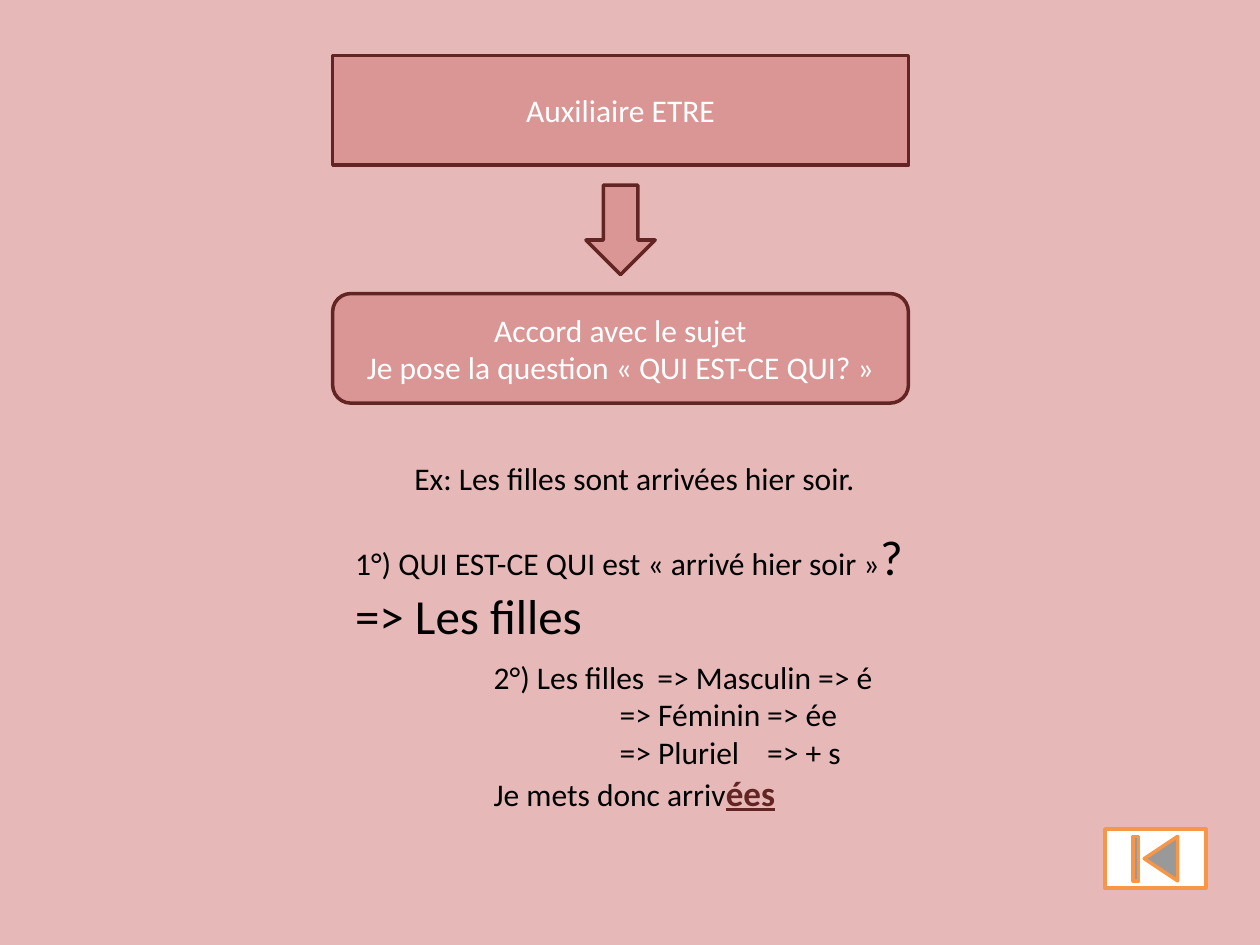
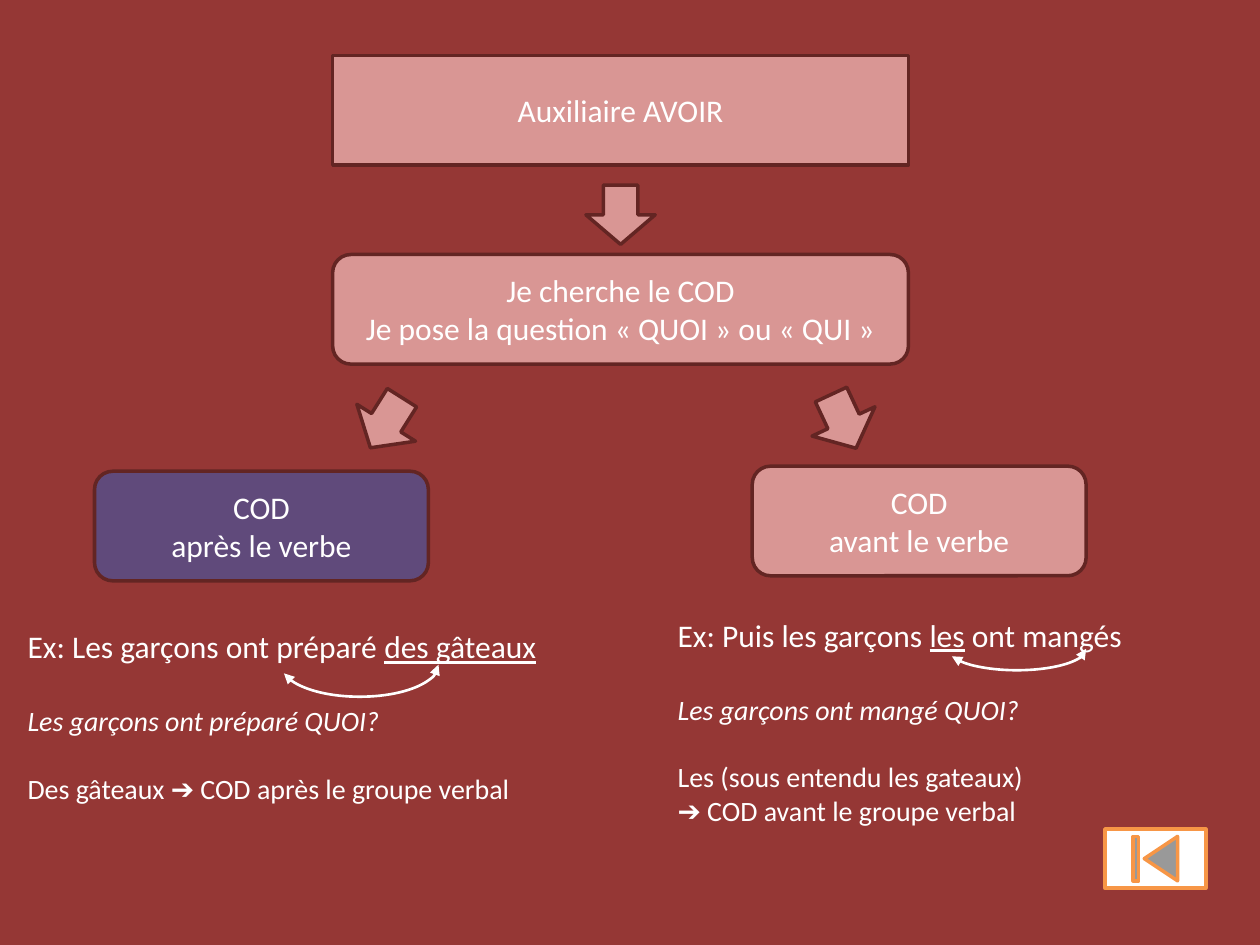
from lxml import etree
from pptx import Presentation
from pptx.dml.color import RGBColor
from pptx.enum.shapes import MSO_SHAPE
from pptx.enum.text import MSO_ANCHOR, MSO_AUTO_SIZE, PP_ALIGN
from pptx.oxml.ns import qn
from pptx.util import Inches, Pt

ROUNDED = MSO_SHAPE.ROUNDED_RECTANGLE
ARROW = MSO_SHAPE.RIGHT_ARROW
ARC = MSO_SHAPE.ARC
BACK_BUTTON = MSO_SHAPE.ACTION_BUTTON_BEGINNING
CENTER, LEFT = PP_ALIGN.CENTER, PP_ALIGN.LEFT

FONT = "Calibri"
PINK = RGBColor(0xE6, 0xB9, 0xB8)
BRICK = RGBColor(0x95, 0x37, 0x35)
ROSE = RGBColor(0xD9, 0x96, 0x94)
MAROON = RGBColor(0x63, 0x25, 0x23)
PURPLE = RGBColor(0x60, 0x4A, 0x7B)
ORANGE = RGBColor(0xF7, 0x96, 0x46)
WHITE = RGBColor(0xFF, 0xFF, 0xFF)
BLACK = RGBColor(0x00, 0x00, 0x00)

STEP_LEFT, STEP_WIDTH, STEP_HEIGHT = 2.64, 4.57, 0.87


def write(frame, text, size=18, color=WHITE, align=LEFT, bold=False, italic=False,
          underline=False, gap=0, tabs=(), same_line=False):
    """Add a run, on a new paragraph unless same_line is set."""
    if same_line or not frame.text:
        paragraph = frame.paragraphs[-1]
    else:
        paragraph = frame.add_paragraph()
    if not same_line:
        paragraph.alignment = align
        paragraph.space_before = Pt(gap)
    if tabs:
        tab_list = etree.SubElement(paragraph._p.get_or_add_pPr(), qn("a:tabLst"))
        for stop in tabs:
            etree.SubElement(tab_list, qn("a:tab"), pos=str(Inches(stop)), algn="l")
    run = paragraph.add_run()
    run.text = text
    font = run.font
    font.name, font.size, font.color.rgb = FONT, Pt(size), color
    font.bold, font.italic, font.underline = bold, italic, underline


def draw(slide, kind, box, fill=ROSE, line=MAROON, width=2, rotation=0, lines=()):
    """Add a preset shape with centred lines of text."""
    shape = slide.shapes.add_shape(kind, *map(Inches, box))
    shape.shadow.inherit = False
    shape.rotation = rotation
    if fill is None:
        shape.fill.background()
    else:
        shape.fill.solid()
        shape.fill.fore_color.rgb = fill
    shape.line.color.rgb = line
    shape.line.width = Pt(width)
    for text in lines:
        write(shape.text_frame, text, align=CENTER)
    return shape


prs = Presentation()
prs.slide_width, prs.slide_height = Inches(10), Inches(7.5)

# Shared parts: background, title box, next step, back button
slides = []
for background, heading, step_top, step_lines in (
    (PINK, "Auxiliaire ETRE", 2.33,
     ("Accord avec le sujet", "Je pose la question « QUI EST-CE QUI? »")),
    (BRICK, "Auxiliaire AVOIR", 2.02,
     ("Je cherche le COD", "Je pose la question « QUOI » ou « QUI »")),
):
    slide = prs.slides.add_slide(prs.slide_layouts[5])
    slide.background.fill.solid()
    slide.background.fill.fore_color.rgb = background

    title = slide.shapes.title
    title.left, title.top = Inches(STEP_LEFT), Inches(0.44)
    title.width, title.height = Inches(STEP_WIDTH), Inches(STEP_HEIGHT)
    outline = etree.SubElement(title._element.spPr, qn("a:prstGeom"), prst="roundRect")
    etree.SubElement(outline, qn("a:avLst"))
    title.fill.solid()
    title.fill.fore_color.rgb = ROSE
    title.line.color.rgb = MAROON
    title.line.width = Pt(2)
    title.text_frame.auto_size = MSO_AUTO_SIZE.NONE
    title.text_frame.vertical_anchor = MSO_ANCHOR.MIDDLE
    write(title.text_frame, heading, align=CENTER)

    draw(slide, ROUNDED, (STEP_LEFT, step_top, STEP_WIDTH, STEP_HEIGHT), lines=step_lines)
    draw(slide, BACK_BUTTON, (8.77, 6.58, 0.8, 0.47), fill=WHITE, line=ORANGE)
    slides.append(slide)

etre, avoir = slides

# Block arrows between the steps
for slide, left, top, length, rotation in (
    (etre, 4.57, 1.55, 0.71, 90),
    (avoir, 4.69, 1.43, 0.47, 90),
    (avoir, 2.83, 3.08, 0.47, 122.2),
    (avoir, 6.46, 3.07, 0.47, 65),
):
    draw(slide, ARROW, (left, top, length, 0.55), rotation=rotation)

# The two positions of the COD
for left, top, fill, position in (
    (0.75, 3.74, PURPLE, "après le verbe"),
    (5.97, 3.7, ROSE, "avant le verbe"),
):
    draw(avoir, ROUNDED, (left, top, 2.65, STEP_HEIGHT), fill=fill, lines=("COD", position))

# Double-headed arcs linking verb and COD
for box in ((2.6, 4.65, 0.51, 1.25), (7.9, 4.6, 0.34, 1.1)):
    link = draw(avoir, ARC, box, fill=None, line=WHITE, width=1.5, rotation=90)
    link.adjustments[0], link.adjustments[1] = 162, 50.06
    for end in ("a:headEnd", "a:tailEnd"):
        etree.SubElement(link.line._get_or_add_ln(), qn(end), type="triangle")

# Examples: slide, box, colour, runs with their format
examples = (
    (etre, (3.19, 3.59, 3.74, 0.4), BLACK, (
        ("Ex: Les filles sont arrivées hier soir.", {}),
    )),
    (etre, (2.72, 4.13, 4.62, 1.04), BLACK, (
        ("1°) QUI EST-CE QUI est « arrivé hier soir »", {}),
        ("?", {"size": 28, "same_line": True}),
        ("=> Les filles", {"size": 28}),
    )),
    (etre, (3.82, 5.17, 3.26, 1.35), BLACK, (
        ("2°) Les filles\t=> Masculin => é", {"tabs": (1.3,)}),
        ("\t=> Féminin\t=> ée", {"tabs": (1, 2.17)}),
        ("\t=> Pluriel\t=> + s", {"tabs": (1, 2.17)}),
        ("Je mets donc arriv", {}),
        ("ées", {"size": 20, "color": MAROON, "bold": True, "underline": True,
                 "same_line": True}),
    )),
    (avoir, (0.12, 4.93, 4.29, 1.99), WHITE, (
        ("Ex: Les garçons ont préparé ", {}),
        ("des gâteaux", {"underline": True, "same_line": True}),
        ("Les garçons ont préparé QUOI?", {"size": 16, "italic": True, "gap": 22}),
        ("Des gâteaux ➔ COD après le groupe verbal", {"size": 16, "gap": 19.5}),
    )),
    (avoir, (5.28, 4.84, 3.77, 2.26), WHITE, (
        ("Ex: Puis les garçons ", {}),
        ("les", {"underline": True, "same_line": True}),
        (" ont mangés", {"same_line": True}),
        ("Les garçons ont mangé QUOI?", {"size": 16, "italic": True, "gap": 22}),
        ("Les (sous entendu les gateaux)", {"size": 16, "gap": 19.5}),
        ("➔ COD avant le groupe verbal", {"size": 16}),
    )),
)
for slide, box, color, runs in examples:
    frame = slide.shapes.add_textbox(*map(Inches, box)).text_frame
    frame.word_wrap = False
    frame.auto_size = MSO_AUTO_SIZE.SHAPE_TO_FIT_TEXT
    for text, style in runs:
        write(frame, text, **{"color": color, **style})

prs.save("out.pptx")
